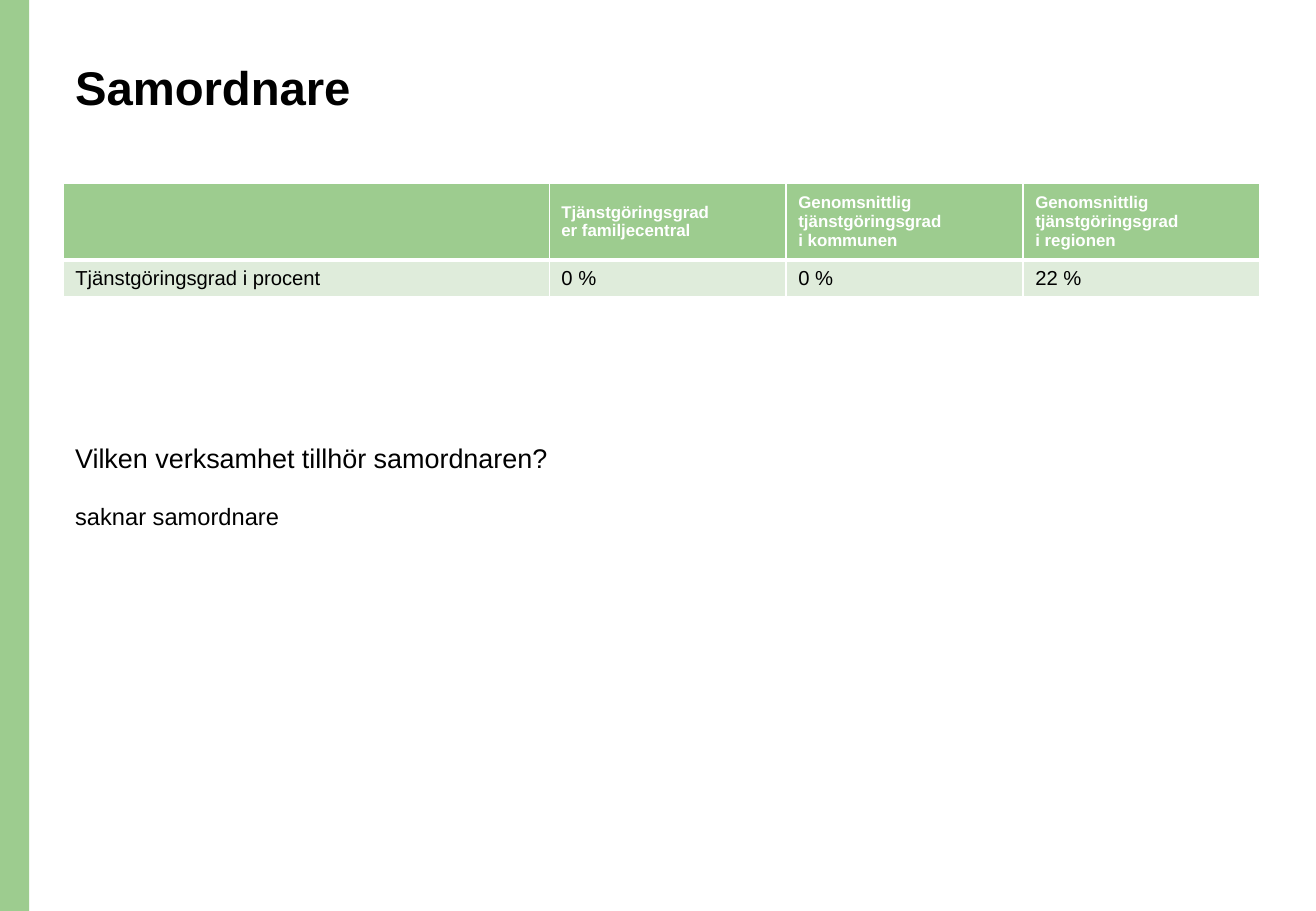
from lxml import etree
from pptx import Presentation
from pptx.dml.color import RGBColor
from pptx.enum.shapes import MSO_SHAPE
from pptx.enum.text import MSO_ANCHOR
from pptx.oxml.ns import qn
from pptx.util import Inches, Pt

RECTANGLE = MSO_SHAPE.RECTANGLE
MIDDLE = MSO_ANCHOR.MIDDLE

GREEN = RGBColor(0x9D, 0xCC, 0x8F)
PALE_GREEN = RGBColor(0xDF, 0xEC, 0xDB)
BLACK = RGBColor(0, 0, 0)
WHITE = RGBColor(255, 255, 255)

TITLE = {"size": Pt(28), "bold": True}
QUESTION = {"size": Pt(16), "bold": False}
ANSWER = {"size": Pt(14), "bold": False}
HEADER = {"size": Pt(10), "bold": True}
VALUE = {"size": Pt(12), "bold": False}

SLIDE_WIDTH, SLIDE_HEIGHT = 10.83, 7.5
LEFT = 0.52
COLUMN_WIDTHS = [4, 1.95, 1.95, 1.95]
ROW_HEIGHTS = [0.63, 0.23]
ROWS = [
    ["", "Tjänstgöringsgrad\ner familjecentral",
     "Genomsnittlig tjänstgöringsgrad\ni kommunen",
     "Genomsnittlig tjänstgöringsgrad\ni regionen"],
    ["Tjänstgöringsgrad i procent", "0 %", "0 %", "22 %"],
]


def write(frame, text, style, color, line_spacing=None):
    frame.text = text
    for paragraph in frame.paragraphs:
        paragraph.line_spacing = line_spacing
        paragraph.font.name = "Arial"
        paragraph.font.color.rgb = color
        for name, value in style.items():
            setattr(paragraph.font, name, value)


def add_side_band(slide, left, top, width, height):
    band = slide.shapes.add_shape(
        RECTANGLE, Inches(left), Inches(top), Inches(width), Inches(height))
    band.shadow.inherit = False
    band.fill.solid()
    band.fill.fore_color.rgb = GREEN
    band.line.fill.background()


def add_text(slide, box, text, style, line_spacing=None):
    frame = slide.shapes.add_textbox(*map(Inches, box)).text_frame
    frame.word_wrap = True
    write(frame, text, style, BLACK, line_spacing)


def set_borders(cell, widths):
    properties = cell._tc.get_or_add_tcPr()
    for side, width in widths.items():
        border = etree.SubElement(properties, qn(f"a:ln{side}"), w=str(Pt(width)))
        fill = etree.SubElement(border, qn("a:solidFill"))
        etree.SubElement(fill, qn("a:srgbClr"), val=str(WHITE))


def add_hours_table(slide, left, top):
    table = slide.shapes.add_table(
        len(ROWS), len(COLUMN_WIDTHS), Inches(left), Inches(top),
        Inches(sum(COLUMN_WIDTHS)), Inches(sum(ROW_HEIGHTS))).table
    for column, width in zip(table.columns, COLUMN_WIDTHS):
        column.width = Inches(width)
    for row, height in zip(table.rows, ROW_HEIGHTS):
        row.height = Inches(height)

    # The header row is set off by a thicker rule below it
    looks = [
        (HEADER, WHITE, GREEN, {"L": 1, "R": 1, "T": 1, "B": 3}),
        (VALUE, BLACK, PALE_GREEN, {"L": 1, "R": 1, "T": 3, "B": 1}),
    ]
    for row, texts, (style, color, background, borders) in zip(table.rows, ROWS, looks):
        for cell, text in zip(row.cells, texts):
            write(cell.text_frame, text, style, color)
            cell.vertical_anchor = MIDDLE
            set_borders(cell, borders)
            cell.fill.solid()
            cell.fill.fore_color.rgb = background


def main():
    deck = Presentation()
    deck.slide_width = Inches(SLIDE_WIDTH)
    deck.slide_height = Inches(SLIDE_HEIGHT)
    slide = deck.slides.add_slide(deck.slide_layouts[6])

    # Side band and title
    add_side_band(slide, 0, 0, 0.24, SLIDE_HEIGHT)
    add_text(slide, (LEFT, 0.48, 9.34, 1.02), "Samordnare", TITLE, 0.9)

    # Working hours
    add_hours_table(slide, LEFT, 1.51)

    # Question and answer
    add_text(slide, (LEFT, 3.62, 8.13, 0.63),
             "Vilken verksamhet tillhör samordnaren?", QUESTION, 0.9)
    add_text(slide, (LEFT, 4.08, 4.16, 0.34), "saknar samordnare", ANSWER)

    deck.save("out.pptx")


if __name__ == "__main__":
    main()
